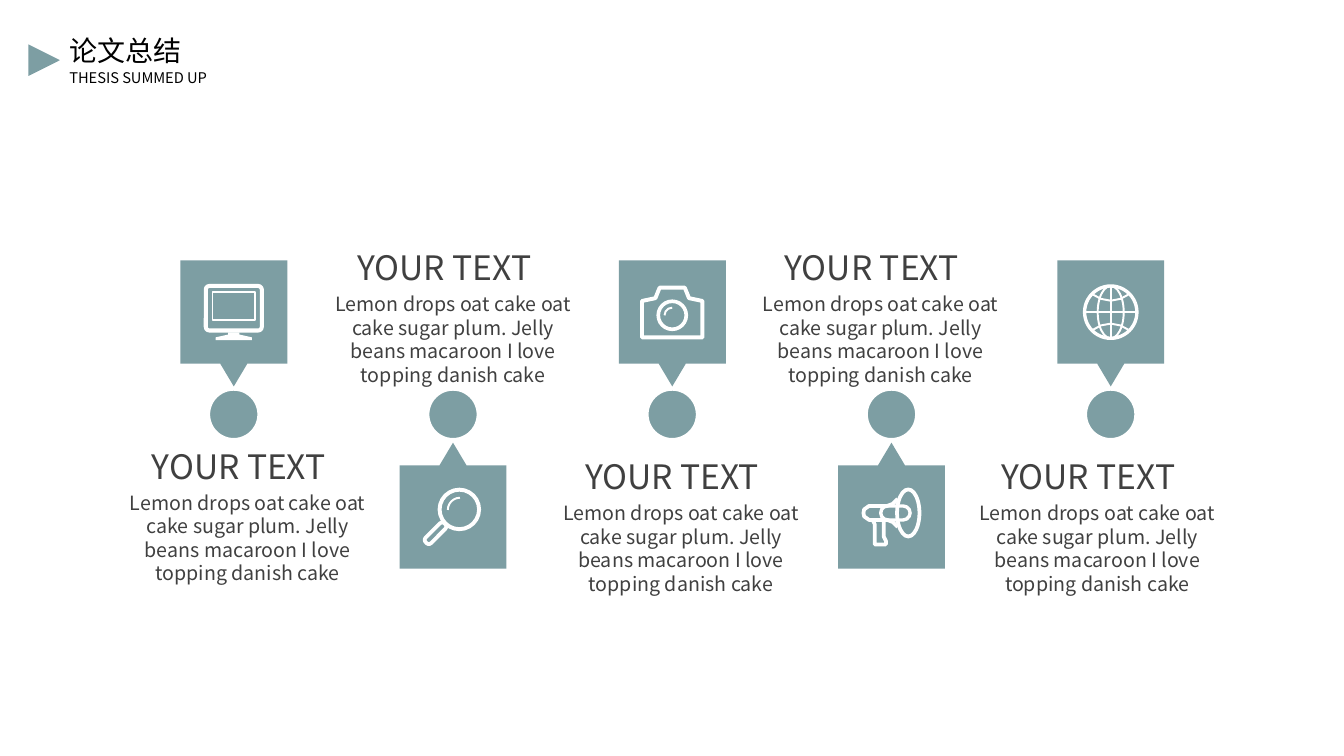
from pptx import Presentation
from pptx.dml.color import RGBColor
from pptx.enum import shapes, text
from pptx.oxml import ns
from pptx.util import Pt
from lxml import etree

KIND = shapes.MSO_SHAPE
TEAL, WHITE, GREY, BLACK = "7D9EA3", "FFFFFF", "404040", "000000"
FONT = "Noto Sans CJK SC"
BODY = ("Lemon drops oat cake oat cake sugar plum. "
        "Jelly beans macaroon I love topping danish cake")


def colour(hex_string):
    return RGBColor.from_string(hex_string)


class Board:
    """Holds the style and the slide; all lengths are in points."""

    def __init__(self, slide):
        self.slide = slide
        self.origin = (0, 0)

    def paint(self, item, fill, line, weight):
        item.shadow.inherit = False
        if fill:
            item.fill.solid()
            item.fill.fore_color.rgb = colour(fill)
        else:
            item.fill.background()
        if line:
            item.line.color.rgb = colour(line)
            item.line.width = Pt(weight)
        else:
            item.line.fill.background()
        return item

    def shape(self, kind, left, top, width, height, fill=None, line=None, weight=1):
        item = self.slide.shapes.add_shape(
            kind, Pt(left), Pt(top), Pt(width), Pt(height))
        return self.paint(item, fill, line, weight)

    def set_words(self, item, words, size, ink, margins=(7.2, 3.6, 7.2, 3.6), wrap=True,
                  align=text.PP_ALIGN.LEFT, anchor=text.MSO_ANCHOR.MIDDLE, spacing=None):
        frame = item.text_frame
        frame.text = words
        frame.word_wrap = wrap
        frame.auto_size = text.MSO_AUTO_SIZE.NONE
        frame.vertical_anchor = anchor
        (frame.margin_left, frame.margin_top,
         frame.margin_right, frame.margin_bottom) = map(Pt, margins)
        paragraph = frame.paragraphs[0]
        paragraph.alignment = align
        if spacing:
            paragraph.line_spacing = Pt(spacing)
        font = paragraph.runs[0].font
        font.name, font.size, font.color.rgb = FONT, Pt(size), colour(ink)
        east_asian = etree.SubElement(paragraph.runs[0]._r.get_or_add_rPr(), ns.qn("a:ea"))
        east_asian.set("typeface", FONT)

    def label(self, left, top, width, height, words, size, ink, **style):
        box = self.slide.shapes.add_textbox(Pt(left), Pt(top), Pt(width), Pt(height))
        self.set_words(box, words, size, ink, **style)

    def title(self, left, top, width, height, words, size, ink):
        heading = self.slide.shapes.title
        heading.left, heading.top = Pt(left), Pt(top)
        heading.width, heading.height = Pt(width), Pt(height)
        self.set_words(heading, words, size, ink)

    def stroke(self, kind, x, y, width, height, weight):
        """White outline centred at x, y from the icon's origin."""
        return self.shape(kind, self.origin[0] + x - width / 2,
                          self.origin[1] + y - height / 2, width, height,
                          line=WHITE, weight=weight)

    def outline(self, points, weight=0, close=False, fill=None):
        moved = [(Pt(self.origin[0] + x), Pt(self.origin[1] + y)) for x, y in points]
        builder = self.slide.shapes.build_freeform(*moved[0])
        builder.add_line_segments(moved[1:], close=close)
        self.paint(builder.convert_to_shape(), fill, WHITE if weight else None, weight)

    def line(self, x1, y1, x2, y2, weight):
        x, y = self.origin
        item = self.slide.shapes.add_connector(
            shapes.MSO_CONNECTOR.STRAIGHT, Pt(x + x1), Pt(y + y1), Pt(x + x2), Pt(y + y2))
        item.line.color.rgb = colour(WHITE)
        item.line.width = Pt(weight)
        etree.SubElement(item._element.spPr, ns.qn("a:effectLst"))

    def glint(self, x, y, size):
        self.stroke(KIND.ARC, x, y, size, size, 1.4).rotation = 270


def monitor(board):
    board.stroke(KIND.ROUNDED_RECTANGLE, 0, -2.8, 40, 31.8, 2.9).adjustments[0] = 0.08
    board.stroke(KIND.RECTANGLE, 0, -4.3, 30.6, 20.2, 1.2)
    right = [(4, 14.4), (4, 16), (13, 18), (13, 20)]
    board.outline(right + [(-x, y) for x, y in reversed(right)], close=True, fill=WHITE)


def magnifier(board):
    board.stroke(KIND.OVAL, 4.5, -5.5, 28.2, 28.2, 2.8)
    board.glint(5, -5.2, 17.4)
    handle = board.stroke(KIND.ROUNDED_RECTANGLE, -12.5, 11.5, 19, 5.5, 2.7)
    handle.adjustments[0] = 0.4
    handle.rotation = 315


def camera(board):
    left = [(-21.6, 18), (-21.6, -8), (-12, -10), (-9, -17.5)]
    board.outline(left + [(-x, y) for x, y in reversed(left)], 2.8, close=True)
    board.stroke(KIND.OVAL, 0, 2.2, 20, 20, 2.6)
    board.glint(0, 2.2, 11)


def megaphone(board):
    board.stroke(KIND.OVAL, 12, -3, 16, 33.6, 2.7)
    upper = [(4.5, -13), (1, -9.5), (-3, -8), (-16, -8), (-19.5, -5.5)]
    board.outline(upper + [(-20, -3)] + [(x, -6 - y) for x, y in reversed(upper)], 2.7)
    board.stroke(KIND.ROUNDED_RECTANGLE, 2.8, -3, 21, 10, 2.4).adjustments[0] = 0.5
    board.outline([(-13.5, 2), (-12, 5), (-12, 19.5), (-4, 19.5), (-4, 17),
                   (-5.5, 14), (-5.5, 3)], 2.7)


def globe(board):
    board.stroke(KIND.OVAL, 0, 0, 37.4, 37.4, 2.4)
    board.stroke(KIND.OVAL, 0, 0, 18.6, 37.4, 1.4)
    board.line(0, -18.6, 0, 18.6, 1.4)
    board.line(-18.6, 0, 18.6, 0, 1.4)
    for side in (-1, 1):
        board.outline([(x, side * y) for x, y in
                       [(-12.5, 12.5), (-7, 9.5), (0, 8.2), (7, 9.5), (12.5, 12.5)]], 1.4)


def main():
    deck = Presentation()
    deck.slide_width, deck.slide_height = Pt(960), Pt(540)
    board = Board(deck.slides.add_slide(deck.slide_layouts[5]))

    board.shape(KIND.ISOSCELES_TRIANGLE, 20.2, 31.7, 22.6, 22.6, TEAL).rotation = 90
    board.title(42.5, 20.2, 275.8, 31.7, "论文总结", 20, BLACK)
    board.label(42.5, 45.4, 119.5, 20.2, "THESIS SUMMED UP", 10.5, BLACK, wrap=False)

    steps = [(monitor, 95.8, 314.6), (magnifier, 242.6, 172.8), (camera, 405.4, 321.8),
             (megaphone, 547.9, 172.8), (globe, 702.7, 321.8)]
    for i, (icon, left, top) in enumerate(steps):
        centre = 167 + 156.6 * i
        points_down = i % 2 == 0
        board.shape(KIND.OVAL, centre - 18, 278, 36, 36, TEAL, WHITE, 2.25)
        callout = board.shape(
            KIND.DOWN_ARROW_CALLOUT if points_down else KIND.UP_ARROW_CALLOUT,
            centre - 38.2, 186 if points_down else 316.2, 76.4, 90, TEAL)
        for k, ratio in enumerate((0.36, 0.125, 0.21, 0.82)):
            callout.adjustments[k] = ratio
        board.origin = (centre, 223 if points_down else 369.4)
        icon(board)
        board.label(left, top, 160.6, 36, "YOUR TEXT", 24, GREY,
                    margins=(12.6, 3.6, 7.2, 3.6))
        board.label(left - 7.4, top + 36, 177.1, 77, BODY, 14, GREY,
                    margins=(0, 0, 0, 0), align=text.PP_ALIGN.CENTER,
                    anchor=text.MSO_ANCHOR.TOP, spacing=16.8)
    deck.save("out.pptx")


if __name__ == "__main__":
    main()
